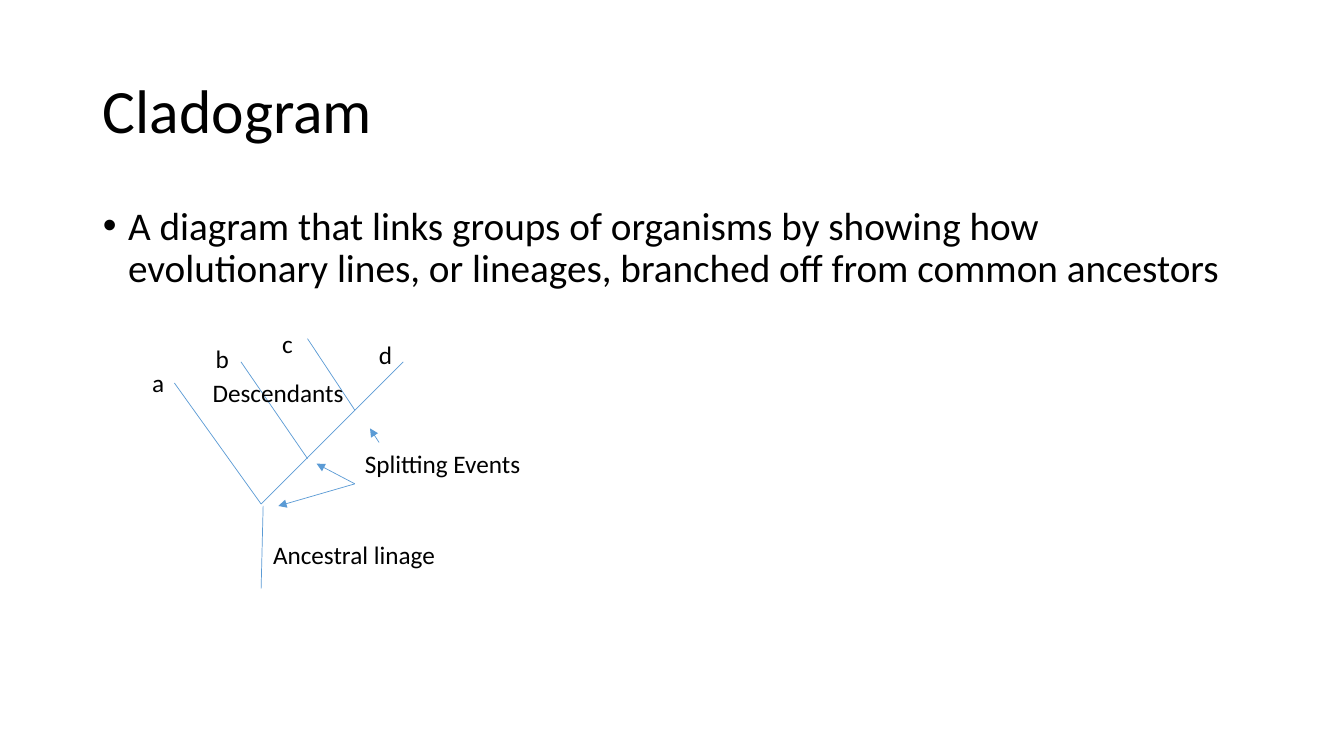
from pptx import Presentation
from pptx.dml.color import RGBColor
from pptx.enum.shapes import MSO_CONNECTOR
from pptx.enum.text import MSO_ANCHOR, MSO_AUTO_SIZE, PP_ALIGN
from pptx.oxml.ns import qn
from pptx.util import Inches, Pt
from lxml.etree import SubElement

INK = "000000"
BLUE = "5B9BD5"


def color(text):
    return RGBColor.from_string(text)


def style(para, size):
    for run in para.runs:
        run.font.name = "Calibri"
        run.font.size = Pt(size)
        run.font.color.rgb = color(INK)


def fill(holder, box, text, size, anchor):
    holder.left, holder.top, holder.width, holder.height = map(Inches, box)
    frame = holder.text_frame
    frame.text = text
    frame.word_wrap = True
    frame.auto_size = MSO_AUTO_SIZE.NONE
    frame.vertical_anchor = anchor
    para = frame.paragraphs[0]
    para.alignment = PP_ALIGN.LEFT
    para.line_spacing = 0.9
    para.space_before = Pt(0)
    style(para, size)
    return para


def title(slide, box):
    fill(slide.shapes.title, box, "Cladogram", 44, MSO_ANCHOR.MIDDLE)


def body(slide, box):
    text = ("A diagram that links groups of organisms by showing how "
            "evolutionary lines, or lineages, branched off from common ancestors")
    para = fill(slide.placeholders[1], box, text, 28, MSO_ANCHOR.TOP)
    props = para._p.get_or_add_pPr()
    props.set("marL", str(Inches(0.25)))
    props.set("indent", str(-Inches(0.25)))
    SubElement(props, qn("a:buFont")).set("typeface", "Arial")
    SubElement(props, qn("a:buChar")).set("char", "•")


def line(slide, start, end, arrow=False):
    points = map(Inches, (*start, *end))
    link = slide.shapes.add_connector(MSO_CONNECTOR.STRAIGHT, *points)
    link.line.color.rgb = color(BLUE)
    link.line.width = Pt(0.5)
    if arrow:
        SubElement(link.line._get_or_add_ln(), qn("a:tailEnd")).set("type", "triangle")
    SubElement(link._element.spPr, qn("a:effectLst"))


def label(slide, text, left, top, width, wrap=True):
    box = slide.shapes.add_textbox(*map(Inches, (left, top, width, 0.4)))
    frame = box.text_frame
    frame.text = text
    frame.word_wrap = wrap
    frame.auto_size = MSO_AUTO_SIZE.SHAPE_TO_FIT_TEXT
    style(frame.paragraphs[0], 18)


def tree(slide, left, top):
    def at(x, y):
        return left + x, top + y

    root = at(1.18, 1.79)
    fork = at(2.11, 1.59)
    for start, end in (
        (root, at(2.59, 0.38)),
        (at(1.2, 1.81), at(1.18, 2.63)),
        (root, at(0.32, 0.59)),
        (at(1.64, 1.34), at(0.98, 0.38)),
        (at(2.11, 0.86), at(1.64, 0.15)),
    ):
        line(slide, start, end)
    for start, end in (
        (fork, at(1.35, 1.81)),
        (fork, at(1.73, 1.39)),
        (at(2.35, 1.18), at(2.26, 1.04)),
    ):
        line(slide, start, end, True)
    for text, x, y, width in (
        ("Ancestral linage", 1.2, 2.09, 2.3),
        ("Splitting Events", 2.11, 1.19, 1.95),
        ("a", 0, 0.38, 0.6),
        ("b", 0.63, 0.15, 0.36),
        ("c", 1.29, 0, 0.36),
        ("d", 2.25, 0.11, 0.36),
    ):
        label(slide, text, *at(x, y), width)
    label(slide, "Descendants", *at(0.6, 0.48), 1.52, False)


def main():
    deck = Presentation()
    deck.slide_width = Inches(13.33)
    deck.slide_height = Inches(7.5)
    slide = deck.slides.add_slide(deck.slide_layouts[1])
    title(slide, (0.92, 0.4, 11.5, 1.45))
    body(slide, (0.92, 2, 11.5, 4.76))
    tree(slide, 1.41, 3.21)
    deck.save("out.pptx")


if __name__ == "__main__":
    main()
